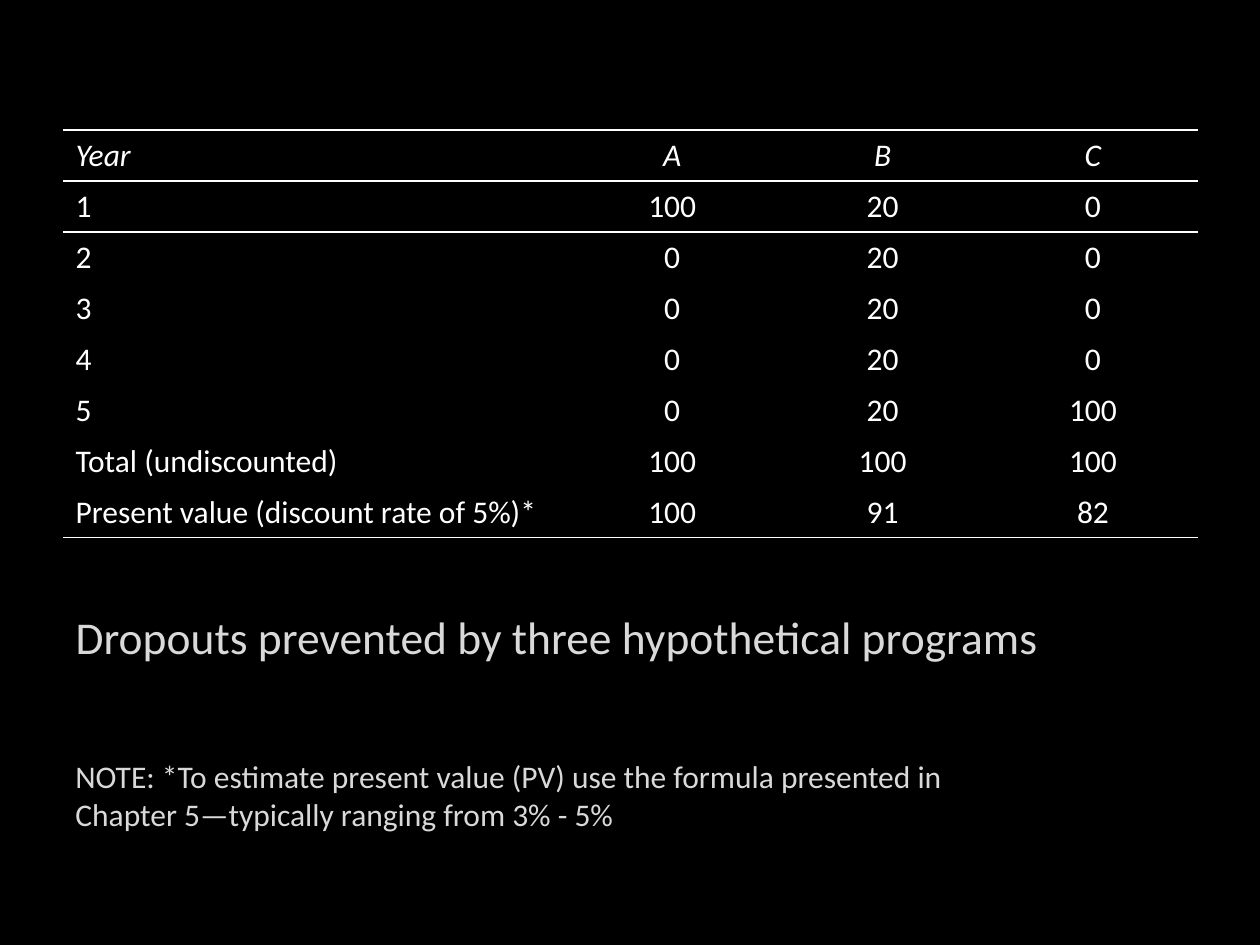
import pptx
import pptx.dml.color
import pptx.enum.text
import pptx.oxml.ns
import pptx.util
from lxml import etree

Inches = pptx.util.Inches
ALIGN = pptx.enum.text.PP_ALIGN
COLORS = {"background": "000000", "table": "FFFFFF", "caption": "D9D9D9"}
FONT = "Calibri"
NO_STYLE_NO_GRID = "{2D5ABB26-0587-4C30-8999-92F81FD0307C}"

ROWS = [
    ("Year", "A", "B", "C"),
    ("1", "100", "20", "0"),
    ("2", "0", "20", "0"),
    ("3", "0", "20", "0"),
    ("4", "0", "20", "0"),
    ("5", "0", "20", "100"),
    ("Total (undiscounted)", "100", "100", "100"),
    ("Present value (discount rate of 5%)*", "100", "91", "82"),
]
COLUMN_WIDTHS = (4, 1.67, 1.67, 1.67)
TABLE_HEIGHT = 3.24


def rgb(name):
    return pptx.dml.color.RGBColor.from_string(COLORS[name])


def set_text(frame, text, size, color, align=ALIGN.LEFT, italic=False):
    frame.text = text
    para = frame.paragraphs[0]
    para.alignment = align
    font = para.runs[0].font
    font.name = FONT
    font.size = pptx.util.Pt(size)
    font.italic = italic
    font.color.rgb = rgb(color)


def add_border(cell, side):
    qn = pptx.oxml.ns.qn
    properties = cell._tc.get_or_add_tcPr()
    line = etree.SubElement(properties, qn(f"a:ln{side}"), w=str(pptx.util.Pt(1)))
    fill = etree.SubElement(line, qn("a:solidFill"))
    etree.SubElement(fill, qn("a:srgbClr"), val=COLORS["table"])


def add_programs_table(page):
    row_height = Inches(TABLE_HEIGHT / len(ROWS))
    table = page.shapes.add_table(
        len(ROWS), len(COLUMN_WIDTHS),
        Inches(0.5), Inches(1.03), Inches(9), Inches(TABLE_HEIGHT),
    ).table
    table.first_row = table.horz_banding = False
    table._tbl.tblPr.find(pptx.oxml.ns.qn("a:tableStyleId")).text = NO_STYLE_NO_GRID

    for column, width in zip(table.columns, COLUMN_WIDTHS):
        column.width = Inches(width)
    for row_index, values in enumerate(ROWS):
        table.rows[row_index].height = row_height
        for column_index, value in enumerate(values):
            cell = table.cell(row_index, column_index)
            align = ALIGN.CENTER if column_index else ALIGN.LEFT
            set_text(cell.text_frame, value, 18, "table", align, italic=row_index == 0)
            # Rules above and below the header, and below the last row
            if row_index in (0, 1):
                add_border(cell, "T")
            if row_index in (0, len(ROWS) - 1):
                add_border(cell, "B")
            cell.fill.background()


def format_caption(box, text, size, left, top, width, height):
    box.left, box.top = Inches(left), Inches(top)
    box.width, box.height = Inches(width), Inches(height)
    frame = box.text_frame
    frame.word_wrap = True
    frame.auto_size = pptx.enum.text.MSO_AUTO_SIZE.SHAPE_TO_FIT_TEXT
    frame.vertical_anchor = pptx.enum.text.MSO_ANCHOR.TOP
    set_text(frame, text, size, "caption")


def main():
    deck = pptx.Presentation()
    deck.slide_width, deck.slide_height = Inches(10), Inches(7.5)
    page = deck.slides.add_slide(deck.slide_layouts[5])
    page.background.fill.solid()
    page.background.fill.fore_color.rgb = rgb("background")

    # Table of programs by year
    add_programs_table(page)

    # Title below the table
    format_caption(page.shapes.title,
                   "Dropouts prevented by three hypothetical programs",
                   26, 0.5, 4.78, 9, 0.54)

    # Note on the discount rate
    note = page.shapes.add_textbox(0, 0, 0, 0)
    format_caption(note,
                   "NOTE: *To estimate present value (PV) use the formula presented in "
                   "Chapter 5—typically ranging from 3% - 5%",
                   18, 0.5, 5.96, 7.75, 0.71)

    deck.save("out.pptx")


if __name__ == "__main__":
    main()
